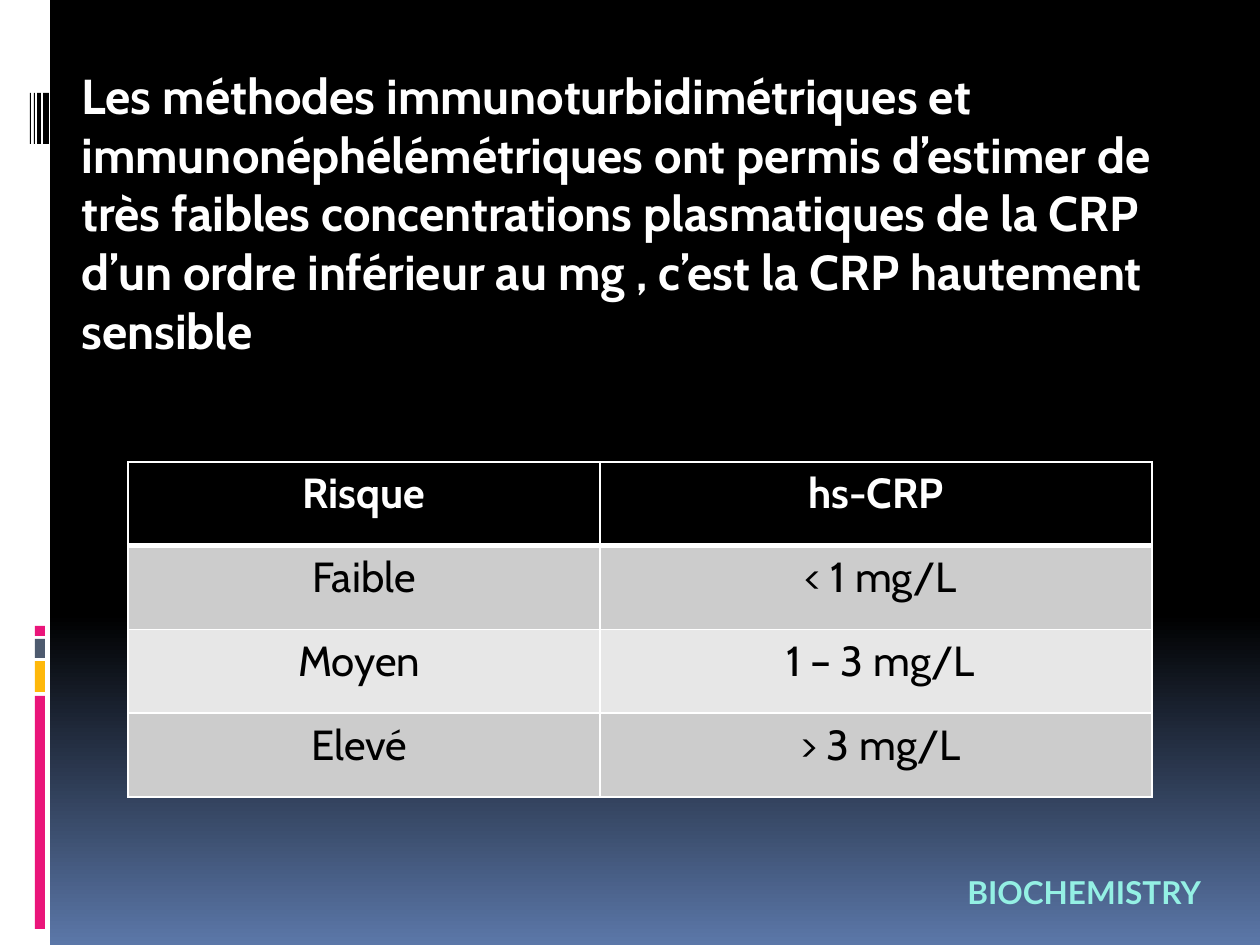
from lxml.etree import SubElement
from pptx import Presentation
from pptx.dml.color import RGBColor as RGB
from pptx.enum.shapes import MSO_SHAPE as SHAPE
from pptx.enum.text import MSO_ANCHOR as ANCHOR, MSO_AUTO_SIZE as FIT, PP_ALIGN as ALIGN
from pptx.oxml.ns import qn
from pptx.util import Pt

PX = 914400 / 126
COLORS = {
    "white": "FFFFFF", "black": "000000", "blue": "5B77A8", "pink": "EA157A",
    "amber": "FEB80A", "slate": "4E5B6F", "aqua": "94F0E4",
    "band": "CCCCCC", "light": "E7E7E7",
}


def px(*values):
    return [round(v * PX) for v in values]


def style(p, font, size, color, bold, align=ALIGN.LEFT):
    p.alignment = align
    p.font.name = font
    p.font.size = Pt(size)
    p.font.bold = bold
    p.font.color.rgb = RGB.from_string(COLORS[color])


prs = Presentation()
prs.slide_width, prs.slide_height = px(1260, 945)
s = prs.slides.add_slide(prs.slide_layouts[5])

bg = s.background.fill
bg.gradient()
bg.gradient_angle = 270
for stop, (pos, color) in zip(bg.gradient_stops, [(0.65, "black"), (1, "blue")]):
    stop.position = pos
    stop.color.rgb = RGB.from_string(COLORS[color])

bars = [
    (0, 0, 50, 945, "white"),
    (35, 696, 10, 233, "pink"),
    (35, 661, 10, 31, "amber"),
    (35, 639, 10, 19, "slate"),
    (35, 626, 10, 10, "pink"),
]
bars += [(x, 93, w, 51, "black") for x, w in [(43, 6), (37, 4), (34, 1), (30, 1)]]
for x, y, w, h, color in bars:
    sp = s.shapes.add_shape(SHAPE.RECTANGLE, *px(x, y, w, h))
    sp.shadow.inherit = False
    sp.fill.solid()
    sp.fill.fore_color.rgb = RGB.from_string(COLORS[color])
    sp.line.fill.background()

rows = [
    ("Risque", "hs-CRP"),
    ("Faible", " < 1 mg/L"),
    ("Moyen ", " 1 – 3 mg/L"),
    ("Elevé ", " > 3 mg/L"),
]
fills = ["black", "band", "light", "band"]
table = s.shapes.add_table(4, 2, *px(128, 462, 1024, 335)).table
for col, width in zip(table.columns, px(472, 552)):
    col.width = width
for i, (row, fill) in enumerate(zip(rows, fills)):
    for j, text in enumerate(row):
        cell = table.cell(i, j)
        tcPr = cell._tc.get_or_add_tcPr()
        for side in "LRTB":
            thick = (i, side) in [(0, "B"), (1, "T")]
            ln = SubElement(tcPr, qn(f"a:ln{side}"), w=str(Pt(3 if thick else 1)))
            line = SubElement(ln, qn("a:solidFill"))
            SubElement(line, qn("a:srgbClr"), val=COLORS["white"])
        cell.fill.solid()
        cell.fill.fore_color.rgb = RGB.from_string(COLORS[fill])
        p = cell.text_frame.paragraphs[0]
        p.text = text
        style(p, "Cabin", 24, "black" if i else "white", i == 0, ALIGN.CENTER)

title = s.shapes.title
title.left, title.top, title.width, title.height = px(69, 59, 1142, 310)
tf = title.text_frame
tf.text = (
    "Les méthodes immunoturbidimétriques et immunonéphélémétriques ont permis "
    "d’estimer de très faibles concentrations plasmatiques de la CRP d’un ordre "
    "inférieur au mg , c’est la CRP hautement sensible"
)
tf.word_wrap = True
tf.auto_size = FIT.NONE
tf.vertical_anchor = ANCHOR.TOP
style(tf.paragraphs[0], "Cabin", 28, "white", True)

tf = s.shapes.add_textbox(*px(955, 867, 305, 50)).text_frame
tf.word_wrap = True
tf.text = "BIOCHEMISTRY"
style(tf.paragraphs[0], "Lato", 18, "aqua", True)

prs.save("out.pptx")
